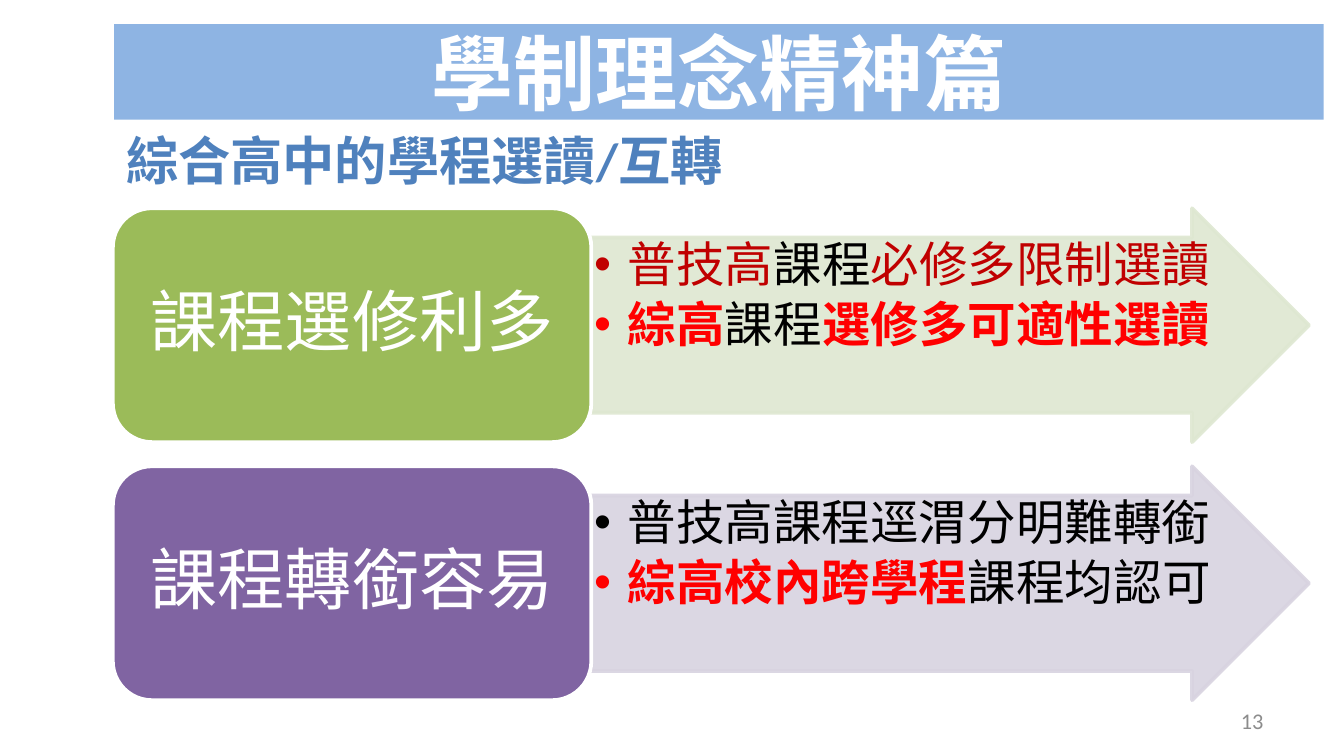
"""Build the slide on choosing and switching programmes in comprehensive high schools."""

from dataclasses import dataclass
from typing import NamedTuple

from lxml.etree import SubElement
from pptx import Presentation
from pptx.dml.color import RGBColor
from pptx.enum.shapes import MSO_SHAPE
from pptx.enum.text import MSO_ANCHOR, PP_ALIGN
from pptx.oxml.ns import qn
from pptx.util import Inches, Pt

WHITE = RGBColor(0xFF, 0xFF, 0xFF)
BLACK = RGBColor(0x00, 0x00, 0x00)
RED = RGBColor(0xFF, 0x00, 0x00)
DARK_RED = RGBColor(0xC0, 0x00, 0x00)
BLUE = RGBColor(0x4F, 0x81, 0xBD)
LIGHT_BLUE = RGBColor(0x8E, 0xB4, 0xE3)
GREEN = RGBColor(0x9B, 0xBB, 0x59)
LIGHT_GREEN = RGBColor(0xDE, 0xE7, 0xD1)
PURPLE = RGBColor(0x80, 0x64, 0xA2)
LIGHT_PURPLE = RGBColor(0xD8, 0xD3, 0xE0)
GRAY = RGBColor(0x8C, 0x8C, 0x8C)

CHINESE_FONT = "Noto Sans CJK SC"
LATIN_FONT = "Calibri"
ROW_TOP, ROW_PITCH, ROW_HEIGHT = 1.55, 1.92, 1.74
LABEL_LEFT, LABEL_WIDTH = 0.84, 3.56
ARROW_LEFT, ARROW_WIDTH = LABEL_LEFT + LABEL_WIDTH, 5.34
BULLETS_OFFSET, BULLETS_WIDTH, BULLETS_HEIGHT = 0.22, 4.69, 1.31


class Part(NamedTuple):
    text: str
    color: RGBColor = BLACK
    bold: bool = False


@dataclass
class Benefit:
    label: str
    color: RGBColor
    arrow_color: RGBColor
    bullets: list[list[Part]]


BENEFITS = [
    Benefit("課程選修利多", GREEN, LIGHT_GREEN, [
        [Part("普技高", DARK_RED), Part("課程"), Part("必修多限制選讀", DARK_RED)],
        [Part("綜高", RED, True), Part("課程"), Part("選修多可適性選讀", RED, True)],
    ]),
    Benefit("課程轉銜容易", PURPLE, LIGHT_PURPLE, [
        [Part("普技高課程逕渭分明難轉銜")],
        [Part("綜高校內跨學程", RED, True), Part("課程均認可")],
    ]),
]


def format_run(run, size: float, color: RGBColor, bold: bool = False,
               font_name: str = CHINESE_FONT) -> None:
    run.font.size = Pt(size)
    run.font.bold = bold
    run.font.name = font_name
    run.font.color.rgb = color
    SubElement(run.font._element, qn("a:ea")).set("typeface", CHINESE_FONT)


def set_margins(text_frame, horizontal: float, vertical: float) -> None:
    text_frame.margin_left = text_frame.margin_right = Inches(horizontal)
    text_frame.margin_top = text_frame.margin_bottom = Inches(vertical)


def write_line(shape, text: str, size: float, color: RGBColor, alignment: PP_ALIGN,
               bold: bool = False, font_name: str = CHINESE_FONT) -> None:
    text_frame = shape.text_frame
    text_frame.word_wrap = True
    text_frame.vertical_anchor = MSO_ANCHOR.MIDDLE
    text_frame.text = text
    paragraph = text_frame.paragraphs[0]
    paragraph.alignment = alignment
    format_run(paragraph.runs[0], size, color, bold, font_name)


def add_block(slide, kind: MSO_SHAPE, left: float, top: float, width: float,
              height: float, fill: RGBColor, line: RGBColor | None = None):
    shape = slide.shapes.add_shape(
        kind, Inches(left), Inches(top), Inches(width), Inches(height))
    shape.shadow.inherit = False
    shape.fill.solid()
    shape.fill.fore_color.rgb = fill
    if line is None:
        shape.line.fill.background()
    else:
        shape.line.color.rgb = line
        shape.line.width = Pt(2)
    return shape


def add_text(slide, left: float, top: float, width: float, height: float):
    return slide.shapes.add_textbox(
        Inches(left), Inches(top), Inches(width), Inches(height))


def write_bullets(shape, bullets: list[list[Part]]) -> None:
    text_frame = shape.text_frame
    text_frame.word_wrap = True
    text_frame.vertical_anchor = MSO_ANCHOR.TOP
    set_margins(text_frame, 0.02, 0.02)
    for index, parts in enumerate(bullets):
        paragraph = text_frame.add_paragraph() if index else text_frame.paragraphs[0]
        paragraph.alignment = PP_ALIGN.LEFT
        paragraph.line_spacing = 0.9
        paragraph.space_after = Pt(3.9)
        properties = paragraph._p.get_or_add_pPr()
        properties.set("marL", str(Inches(0.25)))
        properties.set("indent", str(Inches(-0.25)))
        SubElement(properties, qn("a:buFont")).set("typeface", "Arial")
        SubElement(properties, qn("a:buChar")).set("char", "•")
        for part in parts:
            run = paragraph.add_run()
            run.text = part.text
            format_run(run, 26, part.color, part.bold)


def add_benefit(slide, benefit: Benefit, top: float) -> None:
    arrow = add_block(slide, MSO_SHAPE.RIGHT_ARROW, ARROW_LEFT, top, ARROW_WIDTH,
                      ROW_HEIGHT, benefit.arrow_color, benefit.arrow_color)
    arrow.adjustments[0] = 0.75
    arrow.adjustments[1] = 0.5
    for color in arrow._element.spPr.iter(qn("a:srgbClr")):
        SubElement(color, qn("a:alpha")).set("val", "90000")
    bullets = add_text(slide, ARROW_LEFT, top + BULLETS_OFFSET, BULLETS_WIDTH, BULLETS_HEIGHT)
    write_bullets(bullets, benefit.bullets)
    label = add_block(slide, MSO_SHAPE.ROUNDED_RECTANGLE, LABEL_LEFT, top, LABEL_WIDTH,
                      ROW_HEIGHT, benefit.color, WHITE)
    set_margins(label.text_frame, 0.15, 0.07)
    write_line(label, benefit.label, 36, WHITE, PP_ALIGN.CENTER)
    label.text_frame.paragraphs[0].line_spacing = 0.9


def main() -> None:
    presentation = Presentation()
    presentation.slide_width = Inches(10)
    presentation.slide_height = Inches(10) * 9 // 16
    slide = presentation.slides.add_slide(presentation.slide_layouts[6])
    page_number = add_text(slide, 7.17, 5.21, 2.33, 0.3)
    write_line(page_number, "13", 12, GRAY, PP_ALIGN.RIGHT, font_name=LATIN_FONT)
    title = add_block(slide, MSO_SHAPE.RECTANGLE, 0.85, 0.18, 9, 0.71, LIGHT_BLUE)
    write_line(title, "學制理念精神篇", 44, WHITE, PP_ALIGN.CENTER, bold=True)
    subtitle = add_text(slide, 0.84, 0.89, 4.92, 0.59)
    write_line(subtitle, "綜合高中的學程選讀/互轉", 28, BLUE, PP_ALIGN.LEFT,
               bold=True, font_name=LATIN_FONT)
    for index, benefit in enumerate(BENEFITS):
        add_benefit(slide, benefit, ROW_TOP + index * ROW_PITCH)
    presentation.save("out.pptx")


if __name__ == "__main__":
    main()
